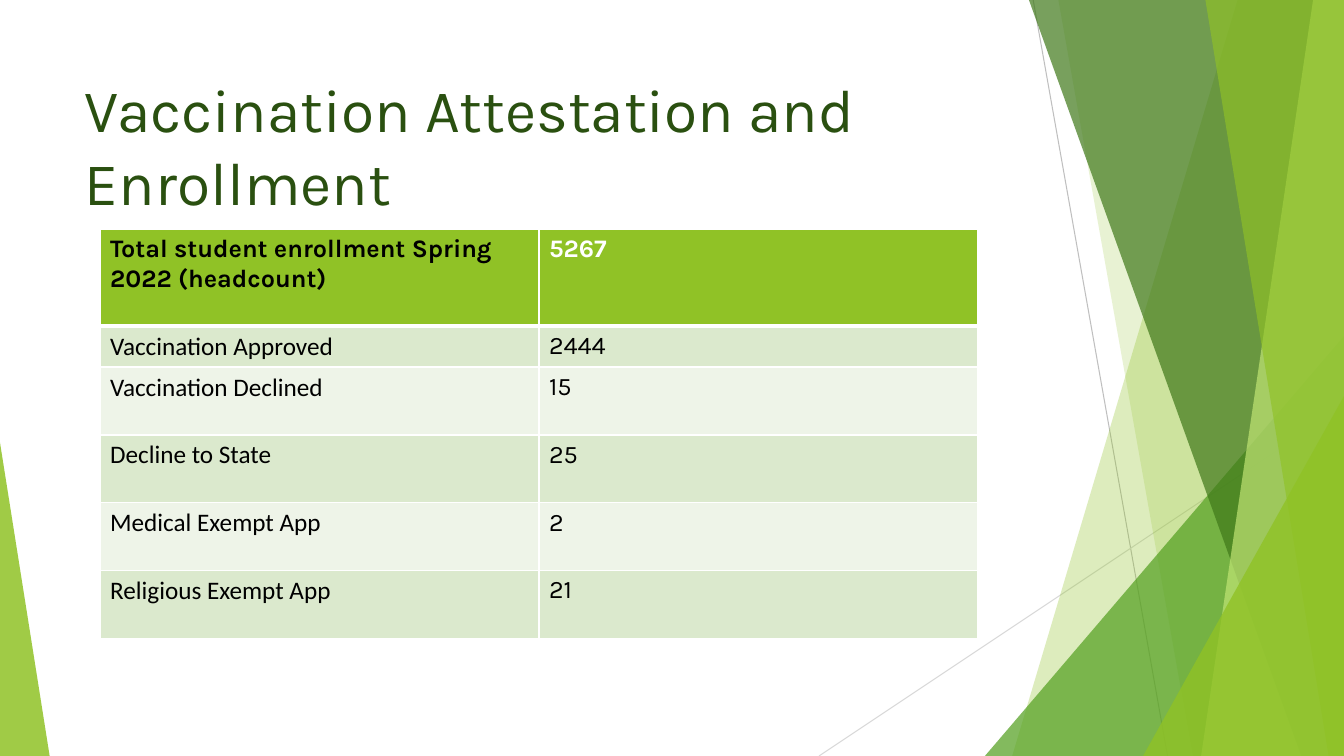
from lxml import etree
from pptx import Presentation
from pptx.dml.color import RGBColor
from pptx.enum.shapes import MSO_CONNECTOR, MSO_SHAPE
from pptx.enum.text import MSO_ANCHOR, MSO_AUTO_SIZE, PP_ALIGN
from pptx.oxml.ns import qn
from pptx.util import Pt

SLIDE_WIDTH, SLIDE_HEIGHT = 960, 540
GREEN = "90C226"
TITLE = "Vaccination Attestation and Enrollment"
ROWS = [
    ("Total student enrollment Spring 2022 (headcount)", "5267"),
    ("Vaccination Approved", "2444"),
    ("Vaccination Declined", "15"),
    ("Decline to State", "25"),
    ("Medical Exempt App", "2"),
    ("Religious Exempt App", "21"),
]


def color(hex_string):
    return RGBColor.from_string(hex_string)


def paint(shape, hex_string, opacity):
    """Fill a shape with a see-through colour, without outline or shadow."""
    shape.shadow.inherit = False
    shape.line.fill.background()
    shape.fill.solid()
    shape.fill.fore_color.rgb = color(hex_string)
    fill_color = shape.fill._xPr.find(qn("a:solidFill"))[0]
    etree.SubElement(fill_color, qn("a:alpha"), val=str(opacity * 1000))


def add_triangle(slide, left, top, width, height, apex, hex_string, opacity):
    shape = slide.shapes.add_shape(
        MSO_SHAPE.ISOSCELES_TRIANGLE, Pt(left), Pt(top), Pt(width), Pt(height))
    shape.adjustments[0] = apex
    paint(shape, hex_string, opacity)


def add_thin_line(slide, start_x, start_y, end_x, end_y, hex_string):
    line = slide.shapes.add_connector(
        MSO_CONNECTOR.STRAIGHT, Pt(start_x), Pt(start_y), Pt(end_x), Pt(end_y))
    line.line.color.rgb = color(hex_string)
    line.line.width = Pt(0.75)
    etree.SubElement(line._element.spPr, qn("a:effectLst"))


def add_band(slide, top_x, bottom_x, right, top, bottom, hex_string, opacity):
    """Add a band with a slanted left edge that reaches the right edge."""
    builder = slide.shapes.build_freeform(Pt(top_x), Pt(top))
    builder.add_line_segments([
        (Pt(right), Pt(top)), (Pt(right), Pt(bottom)), (Pt(bottom_x), Pt(bottom))])
    paint(builder.convert_to_shape(), hex_string, opacity)


def add_right_facets(slide, left, top, width, height):
    right, bottom = left + width, top + height

    # Thin crossing lines
    add_thin_line(slide, left + 153, top, left + 249, bottom, "BFBFBF")
    add_thin_line(slide, right, top + 290, left, bottom, "D9D9D9")

    # Overlapping facets, back to front
    def band(top_offset, bottom_offset, hex_string, opacity):
        add_band(slide, left + top_offset, left + bottom_offset, right,
                 top, bottom, hex_string, opacity)

    def corner(x_offset, y_offset, hex_string, opacity):
        add_triangle(slide, left + x_offset, top + y_offset, width - x_offset,
                     height - y_offset, 1, hex_string, opacity)

    band(299, 138, GREEN, 30)
    band(171, 267, GREEN, 20)
    corner(118.5, 240, "54A021", 72)
    band(150, 344.5, "3F7819", 70)
    band(353, 273, "C0E474", 70)
    band(276, 364, GREEN, 65)
    corner(231.5, 283, GREEN, 80)


def add_title(slide, left, top, width, height):
    title = slide.shapes.title
    title.left, title.top = Pt(left), Pt(top)
    title.width, title.height = Pt(width), Pt(height)
    frame = title.text_frame
    frame.text = TITLE
    frame.word_wrap = True
    frame.auto_size = MSO_AUTO_SIZE.NONE
    frame.vertical_anchor = MSO_ANCHOR.TOP
    paragraph = frame.paragraphs[0]
    paragraph.alignment = PP_ALIGN.LEFT
    paragraph.font.name = "Karla"
    paragraph.font.size = Pt(43.2)
    paragraph.font.color.rgb = color("2A5010")


def set_borders(cell, top_width, bottom_width):
    properties = cell._tc.get_or_add_tcPr()
    widths = {"a:lnL": 1, "a:lnR": 1, "a:lnT": top_width, "a:lnB": bottom_width}
    for position, (tag, width) in enumerate(widths.items()):
        border = etree.Element(qn(tag), w=str(Pt(width)))
        fill = etree.SubElement(border, qn("a:solidFill"))
        etree.SubElement(fill, qn("a:srgbClr"), val="FFFFFF")
        properties.insert(position, border)


def add_enrollment_table(slide, left, top, width, header_height):
    row_heights = [header_height, 27.5] + [48.5] * 4
    table = slide.shapes.add_table(
        len(ROWS), 2, Pt(left), Pt(top), Pt(width), Pt(sum(row_heights))).table
    for column in table.columns:
        column.width = Pt(width / 2)

    for row_index, values in enumerate(ROWS):
        table.rows[row_index].height = Pt(row_heights[row_index])
        header = row_index == 0
        fill = GREEN if header else ("EEF4E8", "DBE9CD")[row_index % 2]
        for column_index, value in enumerate(values):
            cell = table.cell(row_index, column_index)
            cell.text = value
            cell.fill.solid()
            cell.fill.fore_color.rgb = color(fill)
            set_borders(cell, 3 if row_index == 1 else 1, 3 if header else 1)
            font = cell.text_frame.paragraphs[0].font
            font.name = "Karla" if header or column_index == 1 else "Calibri"
            font.size = Pt(18)
            font.bold = header
            font.color.rgb = color("FFFFFF" if header and column_index else "000000")


def main():
    presentation = Presentation()
    presentation.slide_width = Pt(SLIDE_WIDTH)
    presentation.slide_height = Pt(SLIDE_HEIGHT)
    slide = presentation.slides.add_slide(presentation.slide_layouts[5])

    # Background decoration
    add_right_facets(slide, 585, 0, SLIDE_WIDTH - 585, SLIDE_HEIGHT)
    add_triangle(slide, 0, 316, 35.5, SLIDE_HEIGHT - 316, 0, GREEN, 85)

    # Content
    add_title(slide, 53.5, 48, 677, 104)
    add_enrollment_table(slide, 71.5, 164, 627, 69)

    presentation.save("out.pptx")


if __name__ == "__main__":
    main()
